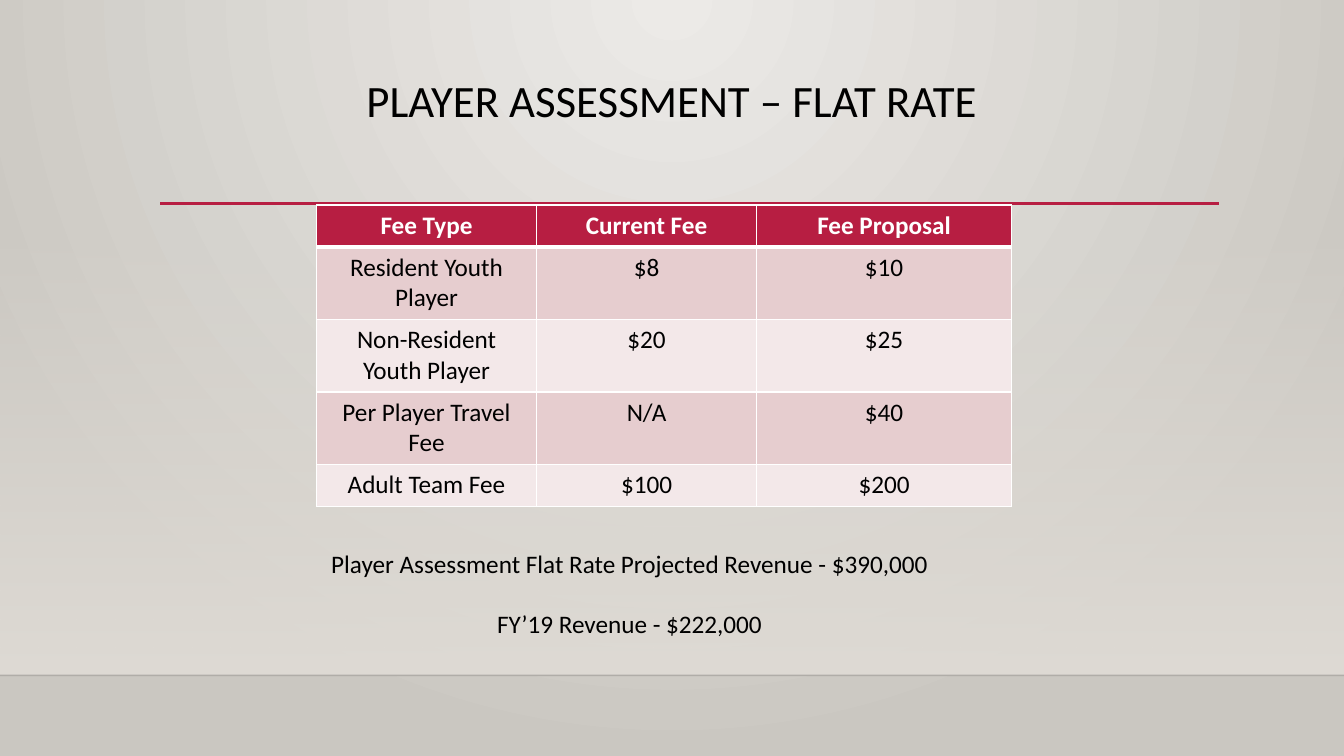
import dataclasses

import lxml.etree
import pptx
import pptx.dml.color
import pptx.enum.shapes
import pptx.enum.text
import pptx.oxml.ns
import pptx.util

qn = pptx.oxml.ns.qn


@dataclasses.dataclass(frozen=True)
class Theme:
    font: str = "Calibri"
    title_size: int = 32
    body_size: int = 18
    ink: str = "000000"
    white: str = "FFFFFF"
    accent: str = "B71E42"
    bands: tuple = ("E6CDCF", "F3E8E9")
    backdrop: tuple = ("ECEAE7", "CAC7C1")
    floor: str = "DFDBD5"
    border: int = 1
    header_border: int = 3


class Deck:
    """Draw slide elements on an 80 by 45 grid in one theme."""

    def __init__(self, theme):
        self.theme = theme
        self.prs = pptx.Presentation()
        self.prs.slide_width = pptx.util.Inches(13.333)
        self.prs.slide_height = pptx.util.Inches(7.5)
        self.s = self.prs.slides.add_slide(self.prs.slide_layouts[6])

    def grid(self, *cells):
        return [round(n * self.prs.slide_height / 45) for n in cells]

    def rgb(self, color):
        return pptx.dml.color.RGBColor.from_string(color)

    def sub(self, parent, tag, **attrs):
        return lxml.etree.SubElement(parent, qn(tag), **attrs)

    def alpha(self, color_element, percent):
        self.sub(color_element, "a:alpha", val=str(percent * 1000))

    def gradient(self, fill, colors):
        fill.gradient()
        for stop, color, position in zip(fill.gradient_stops, colors, (0, 1)):
            stop.color.rgb = self.rgb(color)
            stop.position = position

    def background(self):
        self.gradient(self.s.background.fill, self.theme.backdrop)
        lin = next(self.s._element.iter(qn("a:lin")))
        radial = lxml.etree.Element(qn("a:path"), path="circle")
        self.sub(radial, "a:fillToRect", l="43000", t="0", r="43000", b="100000")
        lin.getparent().replace(lin, radial)

    def fading_band(self, x, y, w, h):
        sp = self.s.shapes.add_shape(
            pptx.enum.shapes.MSO_SHAPE.RECTANGLE, *self.grid(x, y, w, h))
        sp.shadow.inherit = False
        sp.line.fill.background()
        self.gradient(sp.fill, (self.theme.floor, self.theme.floor))
        sp.fill.gradient_angle = 270
        self.alpha(next(sp._element.iter(qn("a:srgbClr"))), 0)

    def rule(self, x1, x2, y, color, width, opacity=100):
        line = self.s.shapes.add_connector(
            pptx.enum.shapes.MSO_CONNECTOR.STRAIGHT, *self.grid(x1, y, x2, y))
        line.line.color.rgb = self.rgb(color)
        line.line.width = pptx.util.Pt(width)
        if opacity < 100:
            self.alpha(next(line._element.iter(qn("a:srgbClr"))), opacity)
        self.sub(line._element.spPr, "a:effectLst")

    def style(self, p, size, color, bold=False):
        p.alignment = pptx.enum.text.PP_ALIGN.CENTER
        for r in p.runs:
            r.font.name = self.theme.font
            r.font.size = pptx.util.Pt(size)
            r.font.bold = bold
            r.font.color.rgb = self.rgb(color)

    def text(self, x, y, w, h, lines, size, leading=1.0, gap=0):
        tf = self.s.shapes.add_textbox(*self.grid(x, y, w, h)).text_frame
        tf.word_wrap = True
        tf.text = "\n".join(lines)
        for i, p in enumerate(tf.paragraphs):
            p.line_spacing = leading
            p.space_before = pptx.util.Pt(gap if i else 0)
            self.style(p, size, self.theme.ink)

    def borders(self, cell, row):
        tcPr = cell._tc.get_or_add_tcPr()
        for side in "LRTB":
            thick = (row, side) in ((0, "B"), (1, "T"))
            width = self.theme.header_border if thick else self.theme.border
            ln = self.sub(tcPr, "a:ln" + side, w=str(pptx.util.Pt(width)))
            self.sub(self.sub(ln, "a:solidFill"), "a:srgbClr", val=self.theme.white)

    def table(self, x, y, widths, heights, rows):
        tbl = self.s.shapes.add_table(
            len(rows), len(widths),
            *self.grid(x, y, sum(widths), sum(heights))).table
        for col, width in zip(tbl.columns, self.grid(*widths)):
            col.width = width
        for row, height in zip(tbl.rows, self.grid(*heights)):
            row.height = height
        for i, values in enumerate(rows):
            header = i == 0
            fill = self.theme.accent if header else self.theme.bands[(i - 1) % 2]
            color = self.theme.white if header else self.theme.ink
            for j, value in enumerate(values):
                cell = tbl.cell(i, j)
                cell.text_frame.text = value
                self.style(cell.text_frame.paragraphs[0],
                           self.theme.body_size, color, header)
                self.borders(cell, i)
                cell.fill.solid()
                cell.fill.fore_color.rgb = self.rgb(fill)


def main():
    theme = Theme()
    deck = Deck(theme)
    deck.background()
    deck.fading_band(0, 13.25, 80, 26.95)
    deck.rule(0, 80, 40.2, theme.ink, 1, opacity=20)
    deck.rule(9.53, 72.57, 12.1, theme.accent, 2.5)
    deck.text(8.5, 4.4, 63, 6.9, ["PLAYER ASSESSMENT – FLAT RATE"],
              theme.title_size, leading=0.9)
    single, double = 2.5, 4.32
    deck.table(18.84, 12.2, (13.1, 13.1, 15.17),
               (single, double, double, double, single), (
        ("Fee Type", "Current Fee", "Fee Proposal"),
        ("Resident Youth Player", "$8", "$10"),
        ("Non-Resident Youth Player", "$20", "$25"),
        ("Per Player Travel Fee", "N/A", "$40"),
        ("Adult Team Fee", "$100", "$200"),
    ))
    deck.text(13.55, 32.35, 47.85, 6.06, [
        "Player Assessment Flat Rate Projected Revenue - $390,000",
        "FY’19 Revenue - $222,000",
    ], theme.body_size, gap=21.5)
    deck.prs.save("out.pptx")


if __name__ == "__main__":
    main()
